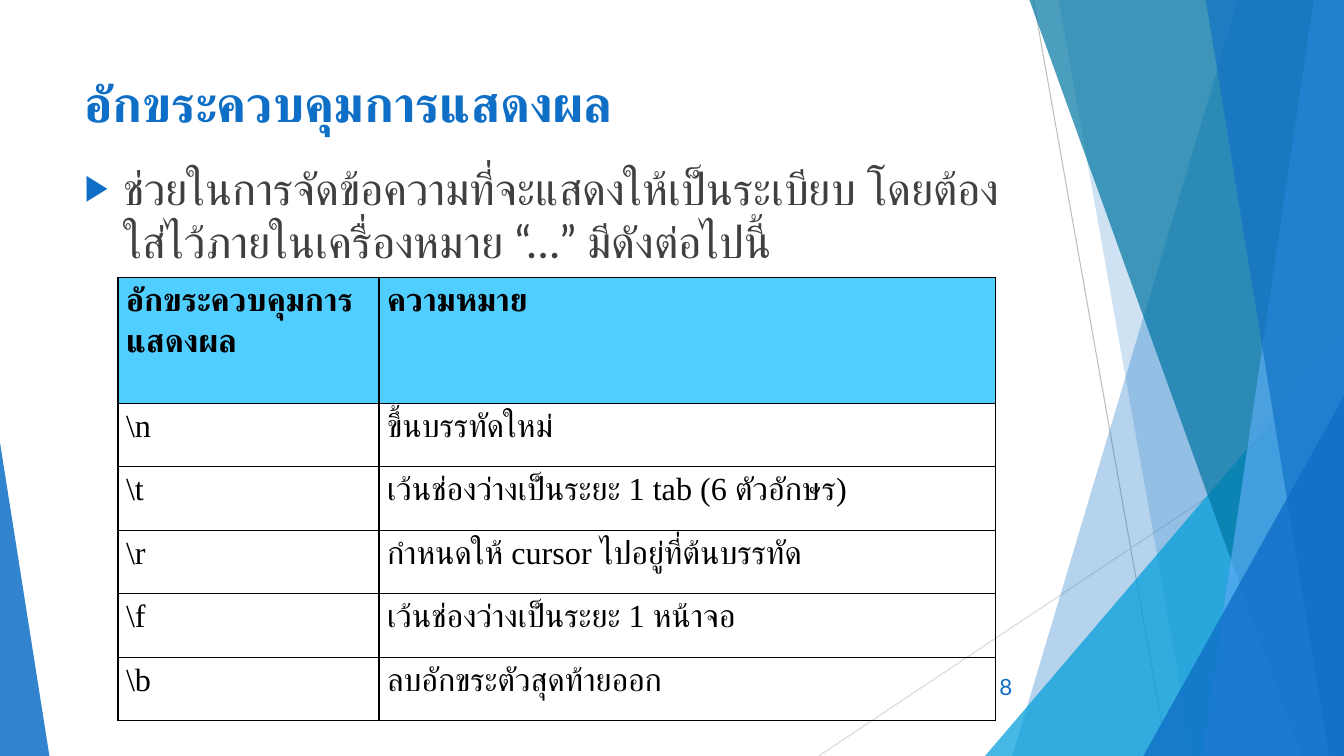
import lxml.etree
import pptx
import pptx.dml.color
import pptx.enum.lang
import pptx.enum.shapes
import pptx.enum.text
import pptx.oxml.ns
import pptx.util

Inches = pptx.util.Inches
Pt = pptx.util.Pt
qn = pptx.oxml.ns.qn
ANCHOR = pptx.enum.text.MSO_ANCHOR
ALIGN = pptx.enum.text.PP_ALIGN

WIDTH, HEIGHT = 13.33, 7.5
BLUE = "0F6FC6"
BLACK = "000000"


def color(hex_text):
    return pptx.dml.color.RGBColor.from_string(hex_text)


def set_values(target, values):
    for name, value in values.items():
        setattr(target, name, value)


def add_xml(parent, tag, **attributes):
    return lxml.etree.SubElement(parent, qn(tag), attributes)


class SlideBuilder:
    font_name = "Lato"
    table_font = "Times New Roman"

    def __init__(self, slide):
        self.slide = slide
        self.shapes = slide.shapes

    # Text
    def add_text(self, frame, text, size, hex_text, font_name=None, bold=False, **paragraph_values):
        paragraph = frame.paragraphs[0]
        set_values(paragraph, paragraph_values)
        run = paragraph.add_run()
        run.text = text
        name = font_name or self.font_name
        set_values(run.font, {"name": name, "size": Pt(size), "bold": bold,
                              "language_id": pptx.enum.lang.MSO_LANGUAGE_ID.THAI})
        run.font.color.rgb = color(hex_text)
        add_xml(run.font._element, "a:cs", typeface=name)
        return paragraph

    def place(self, shape, left, top, width, height, anchor):
        set_values(shape, {"left": Inches(left), "top": Inches(top),
                           "width": Inches(width), "height": Inches(height)})
        set_values(shape.text_frame, {"word_wrap": True, "vertical_anchor": anchor,
                                      "auto_size": pptx.enum.text.MSO_AUTO_SIZE.NONE})
        return shape.text_frame

    def placeholder(self, index, box):
        shape = self.slide.placeholders[index]
        self.shapes._spTree.append(shape._element)  # bring in front of the decoration
        return self.place(shape, *box, ANCHOR.TOP)

    def title(self, text, box):
        self.add_text(self.placeholder(0, box), text, 36, BLUE, bold=True, alignment=ALIGN.LEFT)

    def bullet(self, text, box):
        paragraph = self.add_text(self.placeholder(1, box), text, 32, "404040",
                                  space_before=Pt(10), alignment=ALIGN.LEFT)
        properties = paragraph._p.get_or_add_pPr()
        properties.set("marL", str(Inches(0.38)))
        properties.set("indent", str(-Inches(0.38)))
        add_xml(add_xml(properties, "a:buClr"), "a:srgbClr", val=BLUE)
        add_xml(properties, "a:buSzPct", val="80000")
        add_xml(properties, "a:buChar", char="▶")

    def page_number(self, text, box):
        shape = self.shapes.add_textbox(0, 0, 0, 0)
        frame = self.place(shape, *box, ANCHOR.MIDDLE)
        self.add_text(frame, text, 16, BLUE, alignment=ALIGN.RIGHT)

    # Decoration
    def line(self, start, end, hex_text):
        connector = self.shapes.add_connector(
            pptx.enum.shapes.MSO_CONNECTOR.STRAIGHT, *map(Inches, start + end))
        connector.line.color.rgb = color(hex_text)
        connector.line.width = Pt(0.75)
        add_xml(connector._element.spPr, "a:effectLst")

    def paint(self, shape, hex_text, opacity):
        shape.shadow.inherit = False
        shape.fill.solid()
        shape.fill.fore_color.rgb = color(hex_text)
        fill_color = shape._element.spPr.find(".//" + qn("a:srgbClr"))
        add_xml(fill_color, "a:alpha", val=str(opacity * 1000))
        shape.line.fill.background()

    def panel(self, top_left, bottom_left, hex_text, opacity):
        """A band from a slanted left edge to the right edge of the slide."""
        corners = [(top_left, 0), (WIDTH, 0), (WIDTH, HEIGHT), (bottom_left, HEIGHT)]
        points = [(Inches(x), Inches(y)) for x, y in corners]
        builder = self.shapes.build_freeform(*points[0])
        builder.add_line_segments(points[1:], close=True)
        self.paint(builder.convert_to_shape(), hex_text, opacity)

    def triangle(self, left, top, width, apex, hex_text, opacity):
        """A triangle that stands on the bottom edge of the slide."""
        shape = self.shapes.add_shape(
            pptx.enum.shapes.MSO_SHAPE.ISOSCELES_TRIANGLE,
            *map(Inches, (left, top, width, HEIGHT - top)))
        shape.adjustments[0] = apex
        self.paint(shape, hex_text, opacity)

    # Table
    def border(self, cell):
        properties = cell._tc.get_or_add_tcPr()
        for position, side in enumerate("LRTB"):
            edge = add_xml(properties, "a:ln" + side, w=str(Pt(1)))
            add_xml(add_xml(edge, "a:solidFill"), "a:srgbClr", val=BLACK)
            properties.insert(position, edge)

    def table(self, rows, left, top, column_widths, row_heights):
        frame = self.shapes.add_table(
            len(rows), len(column_widths), Inches(left), Inches(top),
            Inches(sum(column_widths)), Inches(sum(row_heights)))
        table = frame.table
        for column, width in zip(table.columns, column_widths):
            column.width = Inches(width)
        for row_index, (texts, height) in enumerate(zip(rows, row_heights)):
            table.rows[row_index].height = Inches(height)
            for column_index, text in enumerate(texts):
                cell = table.cell(row_index, column_index)
                is_header = row_index == 0
                set_values(cell, {"margin_left": Inches(0.08), "margin_right": Inches(0.08),
                                  "margin_top": 0, "margin_bottom": 0,
                                  "vertical_anchor": ANCHOR.TOP})
                if is_header:
                    cell.fill.solid()
                    cell.fill.fore_color.rgb = color("4FCEFF")
                else:
                    cell.fill.background()
                self.border(cell)
                self.add_text(cell.text_frame, text, 23, BLACK, self.table_font, is_header,
                              line_spacing=1.15, space_after=Pt(10))


def main():
    presentation = pptx.Presentation()
    presentation.slide_width = Inches(WIDTH)
    presentation.slide_height = Inches(HEIGHT)
    slide = presentation.slides.add_slide(presentation.slide_layouts[1])
    builder = SlideBuilder(slide)

    # Background decoration, from back to front
    builder.line((10.25, 0), (11.58, HEIGHT), "BFBFBF")
    builder.line((WIDTH, 4.03), (8.12, HEIGHT), "D9D9D9")
    builder.panel(12.28, 10.04, BLUE, 30)
    builder.panel(10.5, 11.83, BLUE, 20)
    builder.triangle(9.77, 3.33, 3.56, 1, "009DD9", 72)
    builder.panel(10.21, 12.91, "0076A3", 70)
    builder.panel(13.03, 11.92, "59AAF2", 70)
    builder.panel(11.96, 13.18, BLUE, 65)
    builder.triangle(11.34, 3.93, 1.99, 1, BLUE, 80)
    builder.triangle(0, 4.39, 0.49, 0, BLUE, 85)

    # Title, introduction and page number
    builder.title("อักขระควบคุมการแสดงผล", (0.74, 0.67, 9.4, 1.44))
    builder.bullet("ช่วยในการจัดข้อความที่จะแสดงให้เป็นระเบียบ "
                   "โดยต้องใส่ไว้ภายในเครื่องหมาย “…” มีดังต่อไปนี้",
                   (0.74, 1.54, 9.4, 4.24))
    builder.page_number("8", (9.39, 6.61, 0.75, 0.4))

    # Control characters
    control_characters = [
        ("อักขระควบคุมการแสดงผล", "ความหมาย"),
        (r"\n", "ขึ้นบรรทัดใหม่"),
        (r"\t", "เว้นช่องว่างเป็นระยะ 1 tab (6 ตัวอักษร)"),
        (r"\r", "กำหนดให้ cursor ไปอยู่ที่ต้นบรรทัด"),
        (r"\f", "เว้นช่องว่างเป็นระยะ 1 หน้าจอ"),
        (r"\b", "ลบอักขระตัวสุดท้ายออก"),
    ]
    builder.table(control_characters, 1.17, 2.75, [2.59, 6.11], [1.25] + [0.63] * 5)

    presentation.save("out.pptx")


if __name__ == "__main__":
    main()
